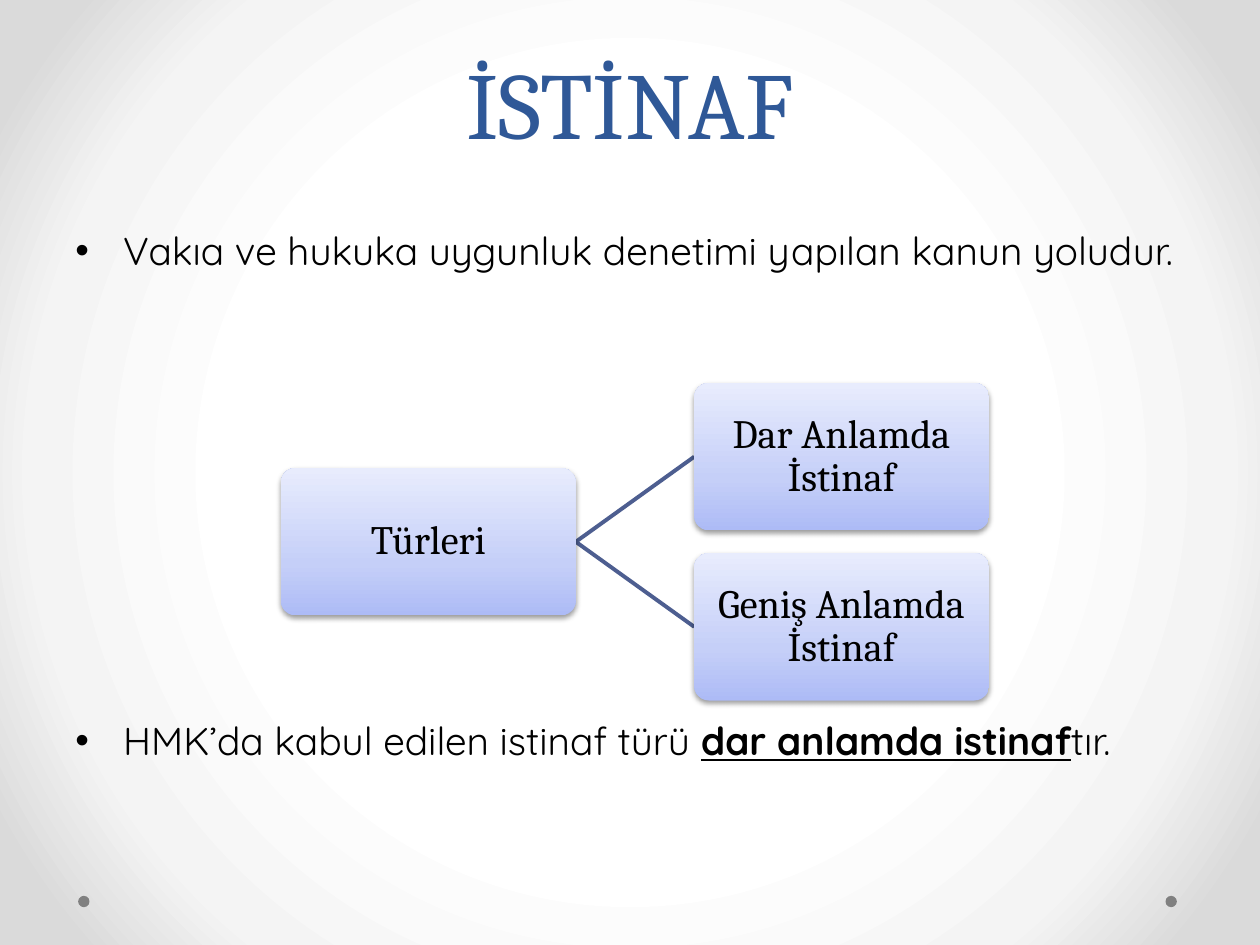
from pptx import Presentation
from pptx.dml.color import RGBColor as Rgb
from pptx.enum.shapes import MSO_CONNECTOR as Conn, MSO_SHAPE as Shape
from pptx.enum.text import MSO_ANCHOR as Anchor, PP_ALIGN as Align
from pptx.oxml import parse_xml
from pptx.oxml.ns import nsdecls
from pptx.util import Inches, Pt

HUES = {
    "title": "2F5897", "text": "000000", "dot": "808080", "link": "4D5E90",
    "deep": "ADBBF6", "mid": "C5CFF8", "pale": "E8ECFD",
    "white": "FFFFFF", "mist": "F4F4F4", "gray": "DADADA",
}
HEAD = {"name": "Cambria", "size": Pt(54)}
BODY = {"name": "Quicksand", "size": Pt(22.2)}
NODE = {"name": "Cambria", "size": Pt(23)}
STRONG = {"bold": True, "underline": True}


def hue(key):
    return Rgb.from_string(HUES[key])


def style(font, form, key="text"):
    for name, value in form.items():
        setattr(font, name, value)
    font.color.rgb = hue(key)


def blend(solid, stops, tail):
    marks = "".join(
        f'<a:gs pos="{pos * 1000}"><a:srgbClr val="{HUES[key]}"/></a:gs>'
        for pos, key in stops
    )
    xml = f'<a:gradFill {nsdecls("a")} rotWithShape="1"><a:gsLst>{marks}</a:gsLst>{tail}</a:gradFill>'
    solid.getparent().replace(solid, parse_xml(xml))


def shade(shape):
    shape.shadow.inherit = False
    shape.element.spPr.find(".//{*}effectLst").append(parse_xml(
        f'<a:outerShdw {nsdecls("a")} blurRad="{Pt(3.1)}" dist="{Pt(1.6)}" dir="5400000" rotWithShape="0">'
        f'<a:srgbClr val="{HUES["text"]}"><a:alpha val="38000"/></a:srgbClr></a:outerShdw>'
    ))


def add_back(slide, dots):
    fill = slide.background.fill
    fill.solid()
    blend(
        slide.element.find(".//{*}bgPr/{*}solidFill"),
        [(50, "white"), (76, "mist"), (92, "gray")],
        '<a:path path="circle"><a:fillToRect l="50000" t="50000" r="50000" b="50000"/></a:path>',
    )
    for left in dots:
        dot = slide.shapes.add_shape(
            Shape.OVAL, Inches(left), Inches(7.11), Inches(0.09), Inches(0.09))
        dot.shadow.inherit = False
        dot.fill.solid()
        dot.fill.fore_color.rgb = hue("dot")
        dot.line.fill.background()


def add_text(slide, box, runs, form, key="text"):
    frame = slide.shapes.add_textbox(*map(Inches, box)).text_frame
    frame.word_wrap = True
    para = frame.paragraphs[0]
    for words, extra in runs:
        run = para.add_run()
        run.text = words
        style(run.font, form | extra, key)
    return frame, para


def add_title(slide, box, words):
    frame, para = add_text(slide, box, [(words, {})], HEAD, "title")
    frame.vertical_anchor = Anchor.BOTTOM
    para.alignment = Align.CENTER
    para.line_spacing = Pt(58)


def add_point(slide, box, runs):
    para = add_text(slide, box, runs, BODY)[1]
    para.alignment = Align.JUSTIFY
    props = para._p.get_or_add_pPr()
    props.set("marL", str(Inches(0.38)))
    props.set("indent", str(-Inches(0.38)))
    props.append(parse_xml(f'<a:buFont {nsdecls("a")} typeface="Arial"/>'))
    props.append(parse_xml(f'<a:buChar {nsdecls("a")} char="•"/>'))


def add_node(slide, box, words):
    node = slide.shapes.add_shape(Shape.ROUNDED_RECTANGLE, *map(Inches, box))
    node.adjustments[0] = 0.1
    node.line.fill.background()
    node.fill.solid()
    blend(
        node.element.spPr.find("{*}solidFill"),
        [(0, "deep"), (35, "mid"), (100, "pale")],
        '<a:lin ang="16200000" scaled="0"/>',
    )
    shade(node)
    frame = node.text_frame
    frame.word_wrap = True
    frame.vertical_anchor = Anchor.MIDDLE
    for side in ("left", "right", "top", "bottom"):
        setattr(frame, f"margin_{side}", Inches(0.05))
    para = frame.paragraphs[0]
    para.alignment = Align.CENTER
    para.line_spacing = 0.9
    run = para.add_run()
    run.text = words
    style(run.font, NODE)


def add_link(slide, ends):
    link = slide.shapes.add_connector(Conn.STRAIGHT, *map(Inches, ends))
    link.line.color.rgb = hue("link")
    link.line.width = Pt(2.25)
    link.element.spPr.append(parse_xml(f'<a:effectLst {nsdecls("a")}/>'))


def add_tree(slide, box, root, leaves):
    left, top, width, height = box
    wide, tall = 2.34, 1.17
    far = left + width - wide
    mid = top + height / 2
    step = (height - tall) / (len(leaves) - 1)
    for row, words in enumerate(leaves):
        head = top + row * step
        add_link(slide, (left + wide, mid, far, head + tall / 2))
        add_node(slide, (far, head, wide, tall), words)
    add_node(slide, (left, mid - tall / 2, wide, tall), root)


def main():
    deck = Presentation()
    deck.slide_width, deck.slide_height = Inches(10), Inches(7.5)
    slide = deck.slides.add_slide(deck.slide_layouts[6])
    add_back(slide, (9.25, 0.62))
    add_title(slide, (0.5, 0, 9, 1.31), "İSTİNAF")
    add_point(slide, (0.5, 1.75, 9, 0.5), [
        ("Vakıa ve hukuka uygunluk denetimi yapılan kanun yoludur.", {}),
    ])
    add_point(slide, (0.5, 5.64, 9, 0.5), [
        ("HMK’da kabul edilen istinaf türü ", {}),
        ("dar anlamda istinaf", STRONG),
        ("tır.", {}),
    ])
    add_tree(slide, (2.23, 3.04, 5.62, 2.52), "Türleri",
             ["Dar Anlamda İstinaf", "Geniş Anlamda İstinaf"])
    deck.save("out.pptx")


if __name__ == "__main__":
    main()
